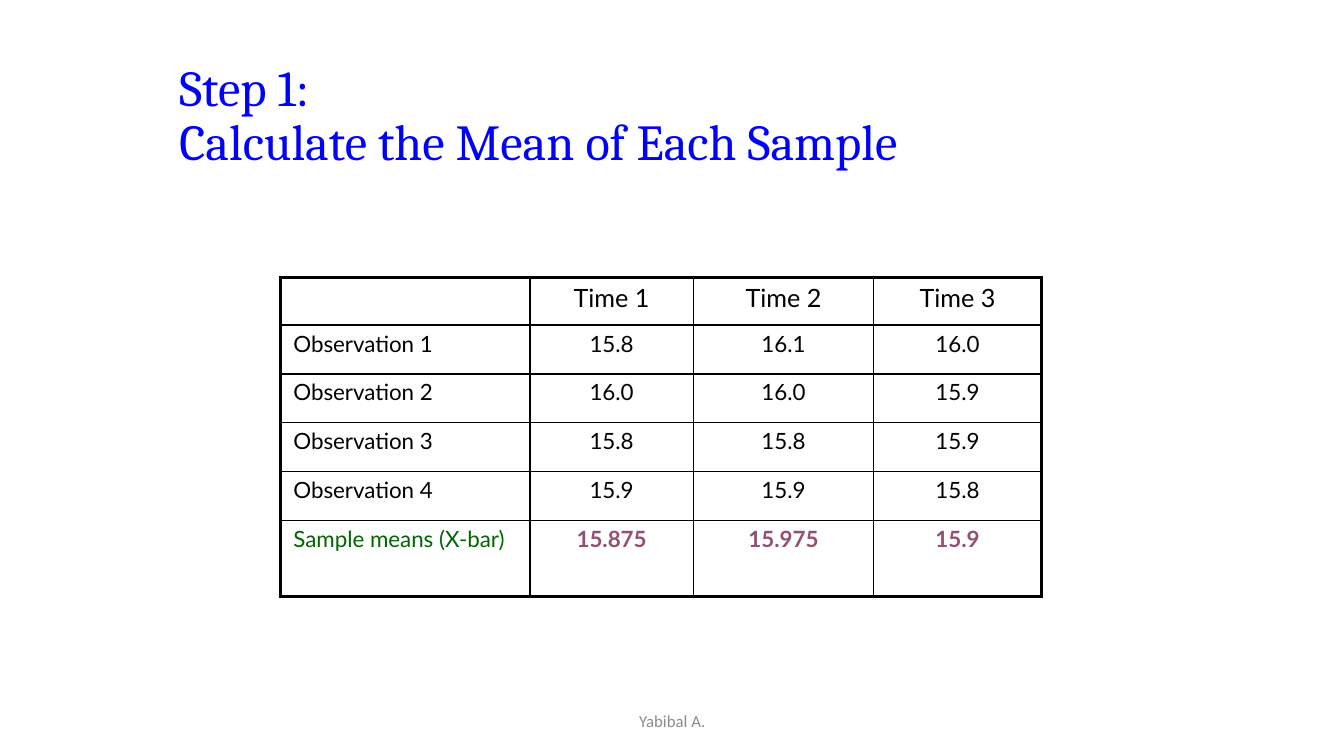
"""Build the slide that shows the mean of each sample in a table."""
from lxml import etree
from pptx import Presentation, util as u
from pptx.dml.color import RGBColor
from pptx.enum import text
from pptx.oxml.ns import qn

TITLE = "Step 1:\vCalculate the Mean of Each Sample"
FOOTER = "Yabibal A."
SAMPLES = [
    ("", "Time 1", "Time 2", "Time 3"),
    ("Observation 1", "15.8", "16.1", "16.0"),
    ("Observation 2", "16.0", "16.0", "15.9"),
    ("Observation 3", "15.8", "15.8", "15.9"),
    ("Observation 4", "15.9", "15.9", "15.8"),
    ("Sample means (X-bar)", "15.875", "15.975", "15.9"),
]
COLUMN_WIDTHS = [178.4, 116.6, 129, 119.6]
ROW_HEIGHTS = [34.2] + [34.9] * 4 + [54.5]
TABLE_LEFT, TABLE_TOP = 200.2, 198

THEME = {
    "title": {"name": "Cambria", "size": 36, "color": "0000FF"},
    "header": {"name": "Lato", "size": 18, "color": "000000"},
    "body": {"name": "Lato", "size": 16, "color": "000000"},
    "means label": {"name": "Lato", "size": 16, "color": "006600"},
    "mean": {"name": "Lato", "size": 16, "color": "954F72", "bold": True},
    "footer": {"name": "Calibri", "size": 12, "color": "8C8C8C"},
    "border": "000000",
    "outer": 2.25,
    "inner": 1,
}
CELL_MARGINS = {"margin_left": 9.36, "margin_right": 9.36,
                "margin_top": 3.6, "margin_bottom": 3.6}


def write(frame, words, role, align):
    frame.text = words
    paragraph = frame.paragraphs[0]
    paragraph.alignment = align
    style = THEME[role]
    values = {"name": style["name"], "size": u.Pt(style["size"]),
              "bold": style.get("bold", False)}
    for font in [paragraph.font] + [run.font for run in paragraph.runs]:
        for key, value in values.items():
            setattr(font, key, value)
        font.color.rgb = RGBColor.from_string(style["color"])
    return paragraph


def add_label(slide, box, words, role, align):
    frame = slide.shapes.add_textbox(*map(u.Pt, box)).text_frame
    frame.word_wrap = True
    frame.vertical_anchor = text.MSO_ANCHOR.MIDDLE
    return write(frame, words, role, align)


def draw_borders(cell, outer_sides):
    properties = cell._tc.get_or_add_tcPr()
    for side in "LRTB":
        width = THEME["outer" if side in outer_sides else "inner"]
        line = etree.SubElement(properties, qn(f"a:ln{side}"), w=str(u.Pt(width)))
        fill = etree.SubElement(line, qn("a:solidFill"))
        etree.SubElement(fill, qn("a:srgbClr"), val=THEME["border"])


def cell_role(row, column):
    if row == 0:
        return "header"
    if row < len(SAMPLES) - 1:
        return "body"
    return "mean" if column else "means label"


def add_samples(slide):
    last_row, last_column = len(SAMPLES) - 1, len(COLUMN_WIDTHS) - 1
    box = (TABLE_LEFT, TABLE_TOP, sum(COLUMN_WIDTHS), sum(ROW_HEIGHTS))
    table = slide.shapes.add_table(
        len(SAMPLES), len(COLUMN_WIDTHS), *map(u.Pt, box)).table
    table.horz_banding = False
    for column, width in zip(table.columns, COLUMN_WIDTHS):
        column.width = u.Pt(width)
    for row, height in zip(table.rows, ROW_HEIGHTS):
        row.height = u.Pt(height)
    for r, record in enumerate(SAMPLES):
        for c, words in enumerate(record):
            cell = table.cell(r, c)
            edges = {"L": c == 0, "R": c == last_column,
                     "T": r == 0, "B": r == last_row}
            draw_borders(cell, [side for side, outer in edges.items() if outer])
            cell.fill.background()
            for key, value in CELL_MARGINS.items():
                setattr(cell, key, u.Pt(value))
            align = text.PP_ALIGN.CENTER if c else text.PP_ALIGN.LEFT
            write(cell.text_frame, words, cell_role(r, c), align)


def main():
    deck = Presentation()
    deck.slide_width, deck.slide_height = u.Pt(960), u.Pt(540)
    slide = deck.slides.add_slide(deck.slide_layouts[6])
    title = add_label(slide, (121, 36, 818, 95.8), TITLE, "title",
                      text.PP_ALIGN.LEFT)
    title.line_spacing = 0.9
    add_samples(slide)
    add_label(slide, (318.2, 500.4, 324, 28.8), FOOTER, "footer",
              text.PP_ALIGN.CENTER)
    deck.save("out.pptx")


if __name__ == "__main__":
    main()
